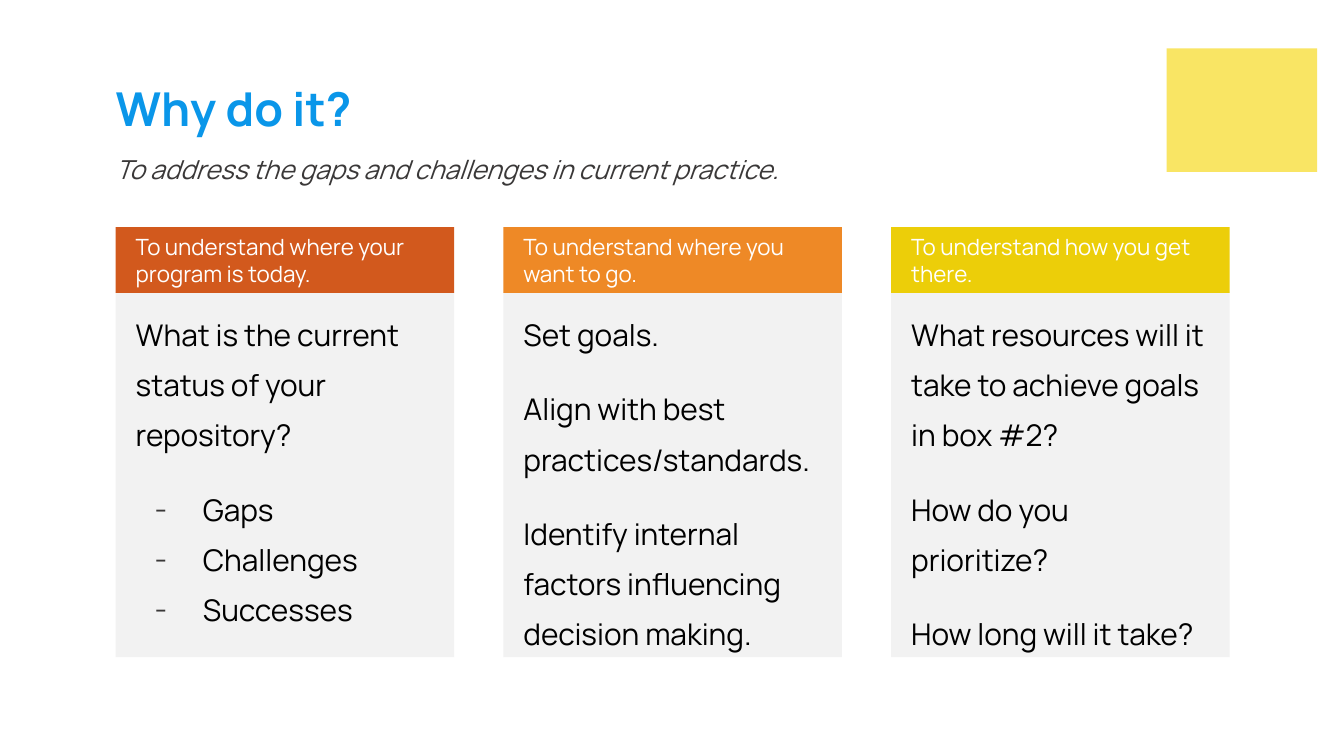
from dataclasses import dataclass

from lxml import etree
from pptx import Presentation
from pptx import util as u
from pptx.dml.color import RGBColor
from pptx.enum import shapes, text
from pptx.oxml.ns import qn
from pptx.shapes.autoshape import Shape
from pptx.slide import Slide
from pptx.text.text import _Paragraph as Paragraph

FONT = "Manrope"
COLORS = {
    "blue": "0A96E9",
    "charcoal": "3A3838",
    "black": "000000",
    "white": "FFFFFF",
    "panel": "F2F2F2",
    "note": "F9E564",
    "rust": "D2591D",
    "orange": "EE8926",
    "gold": "ECCE09",
}
LEFT, LAST_LEFT, WIDTH = 0.86, 6.63, 2.52
HEADER_TOP, HEADER_HEIGHT = 1.69, 0.49
BODY_TOP, BODY_HEIGHT = 2.17, 2.72


@dataclass(frozen=True)
class Line:
    """A paragraph with its list style and space before in points."""
    words: str
    before: float = 0
    bullet: bool = False


@dataclass(frozen=True)
class Column:
    """A coloured heading above a panel of lines."""
    heading: str
    color: str
    lines: tuple[Line, ...]


COLUMNS = (
    Column("To understand where your program is today.", "rust", (
        Line("What is the current status of your repository?"),
        Line("Gaps", before=13, bullet=True),
        Line("Challenges", bullet=True),
        Line("Successes", bullet=True),
    )),
    Column("To understand where you want to go.", "orange", (
        Line("Set goals."),
        Line("Align with best practices/standards.", before=13),
        Line("Identify internal factors influencing decision making.", before=13),
    )),
    Column("To understand how you get there.", "gold", (
        Line("What resources will it take to achieve goals in box #2?"),
        Line("How do you prioritize?", before=13),
        Line("How long will it take?", before=13),
    )),
)


def add_rectangle(slide: Slide, left: float, top: float, width: float,
                  height: float, color: str) -> Shape:
    """Draw a flat borderless rectangle."""
    shape = slide.shapes.add_shape(
        shapes.MSO_SHAPE.RECTANGLE, u.Inches(left), u.Inches(top),
        u.Inches(width), u.Inches(height))
    shape.shadow.inherit = False
    shape.fill.solid()
    shape.fill.fore_color.rgb = RGBColor.from_string(COLORS[color])
    shape.line.fill.background()
    return shape


def add_text_box(slide: Slide, top: float, height: float) -> Shape:
    """Add a wide text box aligned with the columns."""
    return slide.shapes.add_textbox(
        u.Inches(0.82), u.Inches(top), u.Inches(8.42), u.Inches(height))


def add_dash(paragraph: Paragraph) -> None:
    """Give a paragraph a hanging dash."""
    properties = paragraph._p.get_or_add_pPr()
    properties.set("marL", str(u.Inches(0.5)))
    properties.set("indent", str(u.Inches(-0.36)))
    color = etree.SubElement(properties, qn("a:buClr"))
    etree.SubElement(color, qn("a:srgbClr"), val=COLORS["charcoal"])
    etree.SubElement(properties, qn("a:buFont"), typeface=FONT)
    etree.SubElement(properties, qn("a:buChar"), char="-")


def write_text(shape: Shape, *lines: Line, size: float, color: str,
               margins: tuple[float, float, float] = (0.04, 0.02, 0.02),
               spacing: float = 1.0, middle: bool = False,
               bold: bool = False, italic: bool = False) -> None:
    """Fill a shape with formatted lines; margins are side, top and bottom."""
    frame = shape.text_frame
    frame.word_wrap = True
    side, top, bottom = map(u.Inches, margins)
    frame.margin_left = frame.margin_right = side
    frame.margin_top, frame.margin_bottom = top, bottom
    anchor = text.MSO_ANCHOR
    frame.vertical_anchor = anchor.MIDDLE if middle else anchor.TOP
    for index, line in enumerate(lines):
        paragraph = frame.add_paragraph() if index else frame.paragraphs[0]
        if line.bullet:
            add_dash(paragraph)
        paragraph.alignment = text.PP_ALIGN.LEFT
        paragraph.line_spacing = spacing
        paragraph.space_before = u.Pt(line.before)
        run = paragraph.add_run()
        run.text = line.words
        run.font.name = FONT
        run.font.size = u.Pt(size)
        run.font.bold, run.font.italic = bold, italic
        run.font.color.rgb = RGBColor.from_string(COLORS[color])


def add_column(slide: Slide, column: Column, left: float) -> None:
    """Draw a panel and its heading."""
    panel = add_rectangle(slide, left, BODY_TOP, WIDTH, BODY_HEIGHT, "panel")
    write_text(panel, *column.lines, size=16, color="black", spacing=1.4,
               margins=(0.15, 0.08, 0.02))
    header = add_rectangle(slide, left, HEADER_TOP, WIDTH, HEADER_HEIGHT,
                           column.color)
    write_text(header, Line(column.heading), size=12, color="white",
               margins=(0.15, 0, 0), middle=True)


def main() -> None:
    """Build and save the slide."""
    presentation = Presentation()
    presentation.slide_width = u.Inches(10)
    presentation.slide_height = u.Inches(10 * 9 / 16)
    slide = presentation.slides.add_slide(presentation.slide_layouts[6])
    add_rectangle(slide, 8.68, 0.36, 1.12, 0.92, "note")
    write_text(add_text_box(slide, 0.58, 0.49), Line("Why do it?"), size=25,
               color="blue", spacing=0.9, middle=True, bold=True)
    pitch = (LAST_LEFT - LEFT) / (len(COLUMNS) - 1)
    for index, column in enumerate(COLUMNS):
        add_column(slide, column, LEFT + index * pitch)
    write_text(add_text_box(slide, 1.03, 0.36),
               Line("To address the gaps and challenges in current practice."),
               size=14, color="charcoal", spacing=1.4, italic=True)
    presentation.save("out.pptx")


if __name__ == "__main__":
    main()
